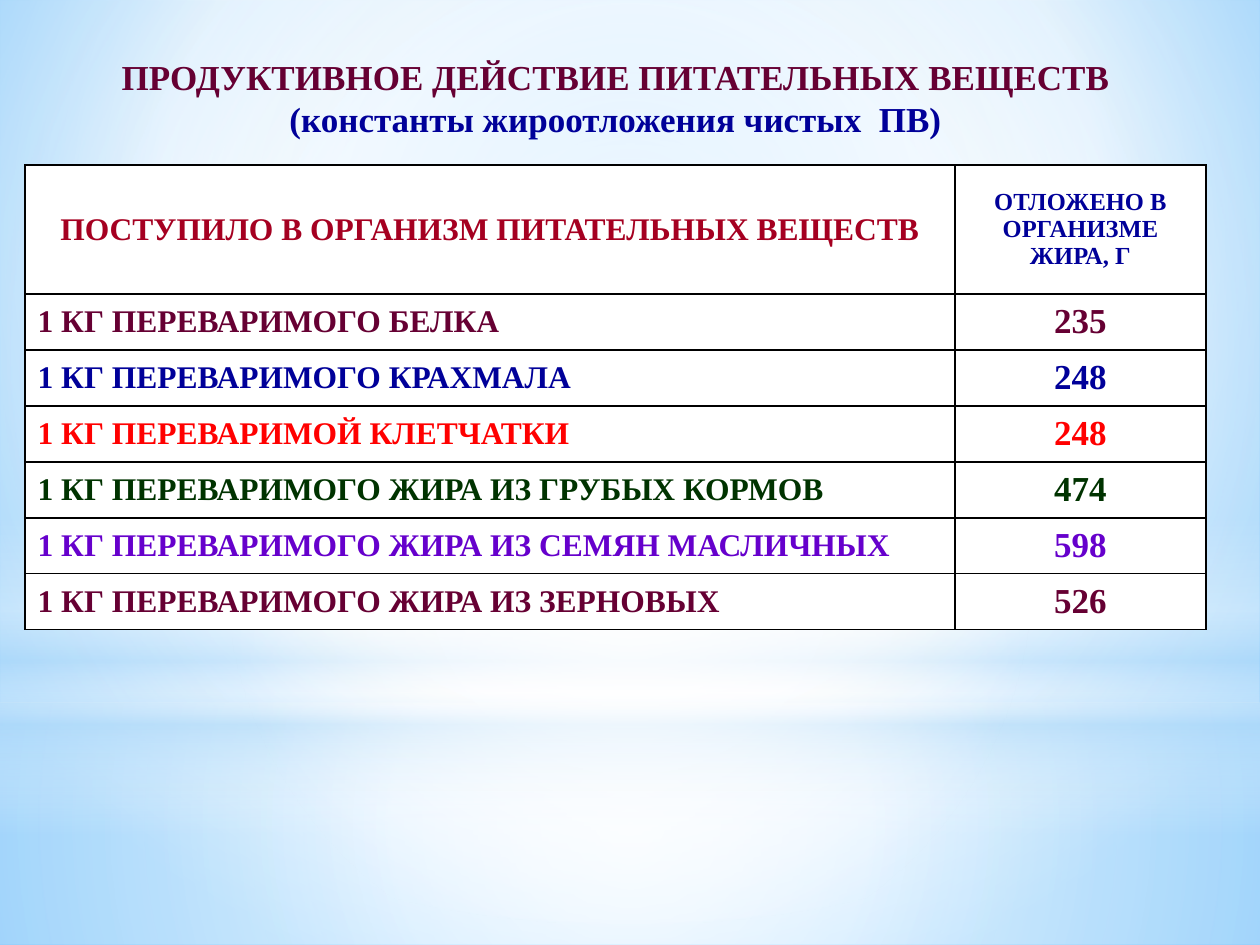
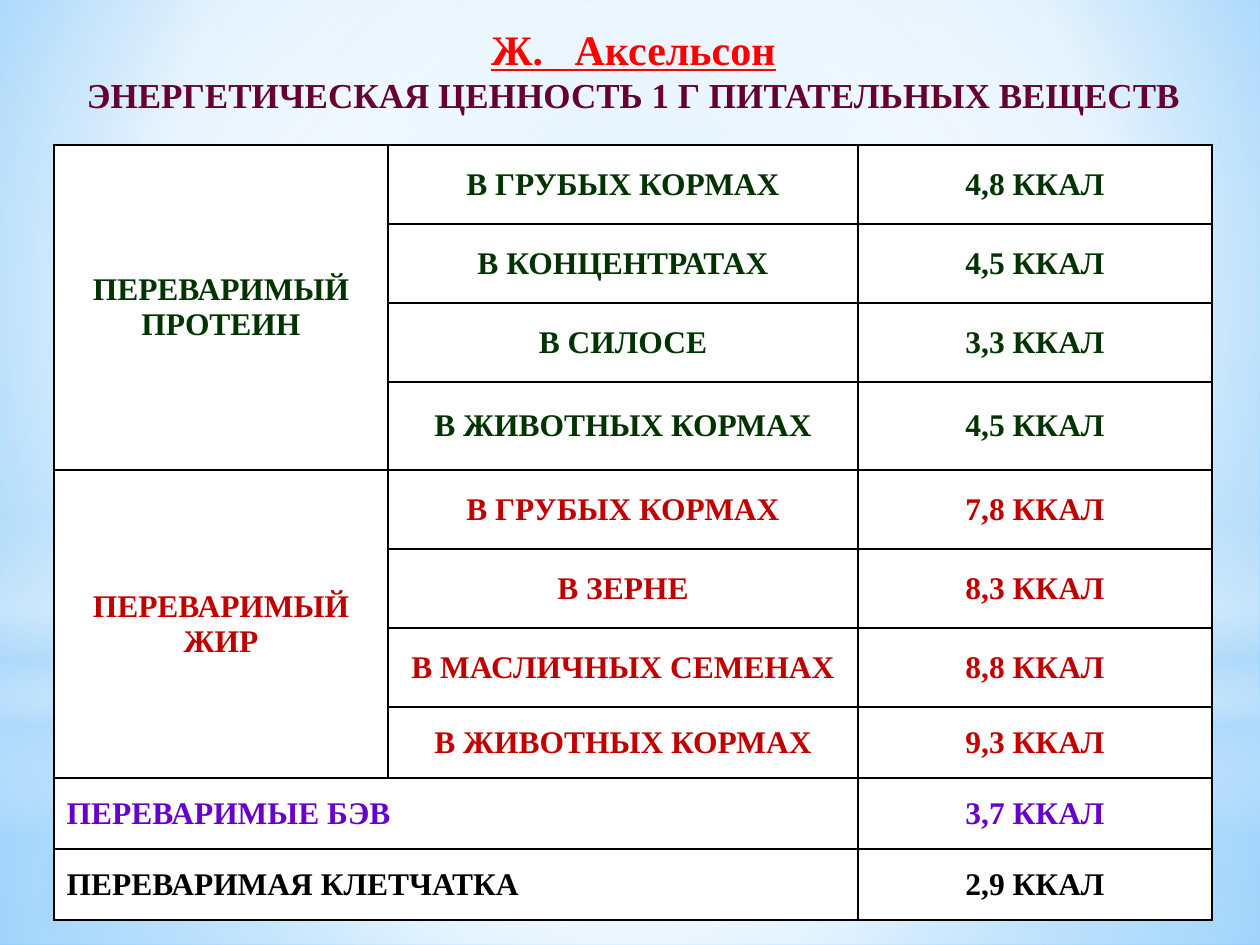
from lxml import etree
from pptx import Presentation
from pptx.dml.color import RGBColor
from pptx.enum.shapes import MSO_SHAPE
from pptx.enum.text import MSO_ANCHOR, PP_ALIGN
from pptx.oxml import parse_xml
from pptx.oxml.ns import nsdecls, qn
from pptx.util import Emu, Pt

PX_PER_INCH = 126
FONT = "Times New Roman"

WHITE = RGBColor(0xFF, 0xFF, 0xFF)
BLACK = RGBColor(0x00, 0x00, 0x00)
PLUM = RGBColor(0x66, 0x00, 0x33)
NAVY = RGBColor(0x00, 0x00, 0x99)
RED = RGBColor(0xFF, 0x00, 0x00)
CRIMSON = RGBColor(0xA5, 0x00, 0x21)
DARK_RED = RGBColor(0xC0, 0x00, 0x00)
GREEN = RGBColor(0x00, 0x33, 0x00)
VIOLET = RGBColor(0x66, 0x00, 0xCC)
SKY = RGBColor(0x9E, 0xD5, 0xFF)
BLUE = RGBColor(0x5B, 0xB9, 0xFF)
MIST = RGBColor(0xB4, 0xDC, 0xFA)

CENTER_FOCUS = (50, 50, 50, 50)
BACKGROUND_STOPS = [(0, SKY, 100), (60, WHITE, 100), (100, BLUE, 100)]
BACKGROUND_FOCUS = (20, 10, 20, 60)
# Preset, box, gradient stops (position, colour, opacity), focus or None for vertical
GLOWS = [
    (MSO_SHAPE.RECTANGLE, (0, 703, 1260, 242),
     [(0, WHITE, 91), (37, WHITE, 76), (100, MIST, 79)], CENTER_FOCUS),
    (MSO_SHAPE.RECTANGLE, (0, 0, 1260, 703),
     [(0, WHITE, 89), (48, WHITE, 62), (100, MIST, 79)], CENTER_FOCUS),
    (MSO_SHAPE.RECTANGLE, (0, 519, 1260, 315),
     [(0, WHITE, 0), (29, WHITE, 30), (45, MIST, 40),
      (55, WHITE, 26), (65, MIST, 60), (100, WHITE, 0)], None),
    (MSO_SHAPE.OVAL, (0, 220, 1260, 703),
     [(0, WHITE, 100), (56, WHITE, 0)], CENTER_FOCUS),
]

FAT_DEPOSITS = [
    ("1 КГ ПЕРЕВАРИМОГО БЕЛКА", "235", PLUM),
    ("1 КГ ПЕРЕВАРИМОГО КРАХМАЛА", "248", NAVY),
    ("1 КГ ПЕРЕВАРИМОЙ КЛЕТЧАТКИ", "248", RED),
    ("1 КГ ПЕРЕВАРИМОГО ЖИРА ИЗ ГРУБЫХ КОРМОВ", "474", GREEN),
    ("1 КГ ПЕРЕВАРИМОГО ЖИРА ИЗ СЕМЯН МАСЛИЧНЫХ", "598", VIOLET),
    ("1 КГ ПЕРЕВАРИМОГО ЖИРА ИЗ ЗЕРНОВЫХ", "526", PLUM),
]

ENERGY_GROUPS = [
    ("ПЕРЕВАРИМЫЙ ПРОТЕИН", GREEN, [
        ("В ГРУБЫХ КОРМАХ", "4,8 ККАЛ"), ("В КОНЦЕНТРАТАХ", "4,5 ККАЛ"),
        ("В СИЛОСЕ", "3,3 ККАЛ"), ("В ЖИВОТНЫХ КОРМАХ", "4,5 ККАЛ")]),
    ("ПЕРЕВАРИМЫЙ ЖИР", DARK_RED, [
        ("В ГРУБЫХ КОРМАХ", "7,8 ККАЛ"), ("В ЗЕРНЕ", "8,3 ККАЛ"),
        ("В МАСЛИЧНЫХ СЕМЕНАХ", "8,8 ККАЛ"), ("В ЖИВОТНЫХ КОРМАХ", "9,3 ККАЛ")]),
]
ENERGY_TOTALS = [
    ("ПЕРЕВАРИМЫЕ БЭВ", "3,7 ККАЛ", VIOLET),
    ("ПЕРЕВАРИМАЯ КЛЕТЧАТКА", "2,9 ККАЛ", BLACK),
]


def px(length):
    return Emu(round(length * 914400 / PX_PER_INCH))


def set_gradient(fill, parent, stops, focus):
    """Replace the fill held by the XML parent with a radial or vertical gradient."""
    fill.solid()
    gradient = parse_xml(f'<a:gradFill rotWithShape="1" {nsdecls("a")}><a:gsLst/></a:gradFill>')
    for position, color, opacity in stops:
        stop = etree.SubElement(gradient[0], qn("a:gs"), pos=str(position * 1000))
        tint = etree.SubElement(stop, qn("a:srgbClr"), val=str(color))
        if opacity < 100:
            etree.SubElement(tint, qn("a:alpha"), val=str(opacity * 1000))
    if focus:
        path = etree.SubElement(gradient, qn("a:path"), path="circle")
        edges = {side: str(value * 1000) for side, value in zip("ltrb", focus)}
        etree.SubElement(path, qn("a:fillToRect"), edges)
    else:
        etree.SubElement(gradient, qn("a:lin"), ang="5400000", scaled="0")
    parent.replace(parent.find(qn("a:solidFill")), gradient)


def build_master(master, slide):
    """Draw the glows on the slide and move them to the master, which all slides share."""
    background_fill = master.background.fill
    background = master.element.find(".//" + qn("p:bgPr"))
    set_gradient(background_fill, background, BACKGROUND_STOPS, BACKGROUND_FOCUS)
    for number, (preset, box, stops, focus) in enumerate(GLOWS):
        glow = slide.shapes.add_shape(preset, *map(px, box))
        glow.shadow.inherit = False
        glow.line.fill.background()
        set_gradient(glow.fill, glow.element.spPr, stops, focus)
        glow.element.nvSpPr.cNvPr.set("id", str(100 + number))
        master.shapes.element.append(glow.element)


def add_text(paragraph, text, size=18, color=BLACK, align=PP_ALIGN.CENTER, underline=False):
    paragraph.alignment = align
    run = paragraph.add_run()
    run.text = text
    font = run.font
    font.name, font.size, font.bold = FONT, Pt(size), True
    font.underline = underline
    font.color.rgb = color


def add_title_frame(slide, box):
    frame = slide.shapes.add_textbox(*map(px, box)).text_frame
    frame.word_wrap = True
    frame.vertical_anchor = MSO_ANCHOR.MIDDLE
    return frame


def style_cell(cell):
    """Give the cell a white fill, thin black borders and middle anchoring."""
    cell.fill.solid()
    cell.fill.fore_color.rgb = WHITE
    cell.vertical_anchor = MSO_ANCHOR.MIDDLE
    properties = cell._tc.get_or_add_tcPr()
    for index, side in enumerate("LRTB"):
        properties.insert(index, parse_xml(
            f'<a:ln{side} w="12700" {nsdecls("a")}><a:solidFill>'
            f'<a:srgbClr val="{BLACK}"/></a:solidFill></a:ln{side}>'))


def add_grid(slide, left, top, widths, heights):
    frame = slide.shapes.add_table(len(heights), len(widths), px(left), px(top),
                                   px(sum(widths)), px(sum(heights)))
    table = frame.table
    table.first_row = table.horz_banding = False
    for column, width in zip(table.columns, widths):
        column.width = px(width)
    for row, height in zip(table.rows, heights):
        row.height = px(height)
    for cell in table.iter_cells():
        style_cell(cell)
    return table


def write_cell(table, row, column, text, **text_format):
    add_text(table.cell(row, column).text_frame.paragraphs[0], text, **text_format)


def build_fat_slide(slide):
    left, width = 25, 1181
    paragraph = add_title_frame(slide, (left, 49, width, 97)).paragraphs[0]
    add_text(paragraph, "ПРОДУКТИВНОЕ ДЕЙСТВИЕ ПИТАТЕЛЬНЫХ ВЕЩЕСТВ ", size=20, color=PLUM)
    add_text(paragraph, "(константы жироотложения чистых  ПВ)", size=20, color=NAVY)

    value_width = 251
    heights = [129] + [56] * len(FAT_DEPOSITS)
    table = add_grid(slide, left, 165, [width - value_width, value_width], heights)
    write_cell(table, 0, 0, "ПОСТУПИЛО В ОРГАНИЗМ ПИТАТЕЛЬНЫХ ВЕЩЕСТВ", color=CRIMSON)
    write_cell(table, 0, 1, "ОТЛОЖЕНО В ОРГАНИЗМЕ ЖИРА, Г", size=14, color=NAVY)
    for row, (nutrient, grams, color) in enumerate(FAT_DEPOSITS, start=1):
        write_cell(table, row, 0, nutrient, color=color, align=PP_ALIGN.LEFT)
        write_cell(table, row, 1, grams, size=20, color=color)


def build_energy_slide(slide):
    title = add_title_frame(slide, (72, 17, 1123, 105))
    add_text(title.paragraphs[0], "Ж.   Аксельсон", size=24, color=RED, underline=True)
    add_text(title.add_paragraph(), "ЭНЕРГЕТИЧЕСКАЯ ЦЕННОСТЬ 1 Г ПИТАТЕЛЬНЫХ ВЕЩЕСТВ",
             size=20, color=PLUM)

    heights = [79] * 3 + [88] + [79] * 3 + [71] * 3
    table = add_grid(slide, 54, 145, [334, 470, 354], heights)
    row = 0
    for nutrient, color, feeds in ENERGY_GROUPS:
        table.cell(row, 0).merge(table.cell(row + len(feeds) - 1, 0))
        write_cell(table, row, 0, nutrient, color=color)
        for feed, energy in feeds:
            write_cell(table, row, 1, feed, color=color)
            write_cell(table, row, 2, energy, color=color)
            row += 1
    for row, (nutrient, energy, color) in enumerate(ENERGY_TOTALS, start=row):
        table.cell(row, 0).merge(table.cell(row, 1))
        write_cell(table, row, 0, nutrient, color=color, align=PP_ALIGN.LEFT)
        write_cell(table, row, 2, energy, color=color)


def main():
    presentation = Presentation()
    presentation.slide_width, presentation.slide_height = px(1260), px(945)
    blank = presentation.slide_layouts[6]
    fat_slide, energy_slide = (presentation.slides.add_slide(blank) for _ in range(2))
    build_master(presentation.slide_master, fat_slide)
    build_fat_slide(fat_slide)
    build_energy_slide(energy_slide)
    presentation.save("out.pptx")


if __name__ == "__main__":
    main()
